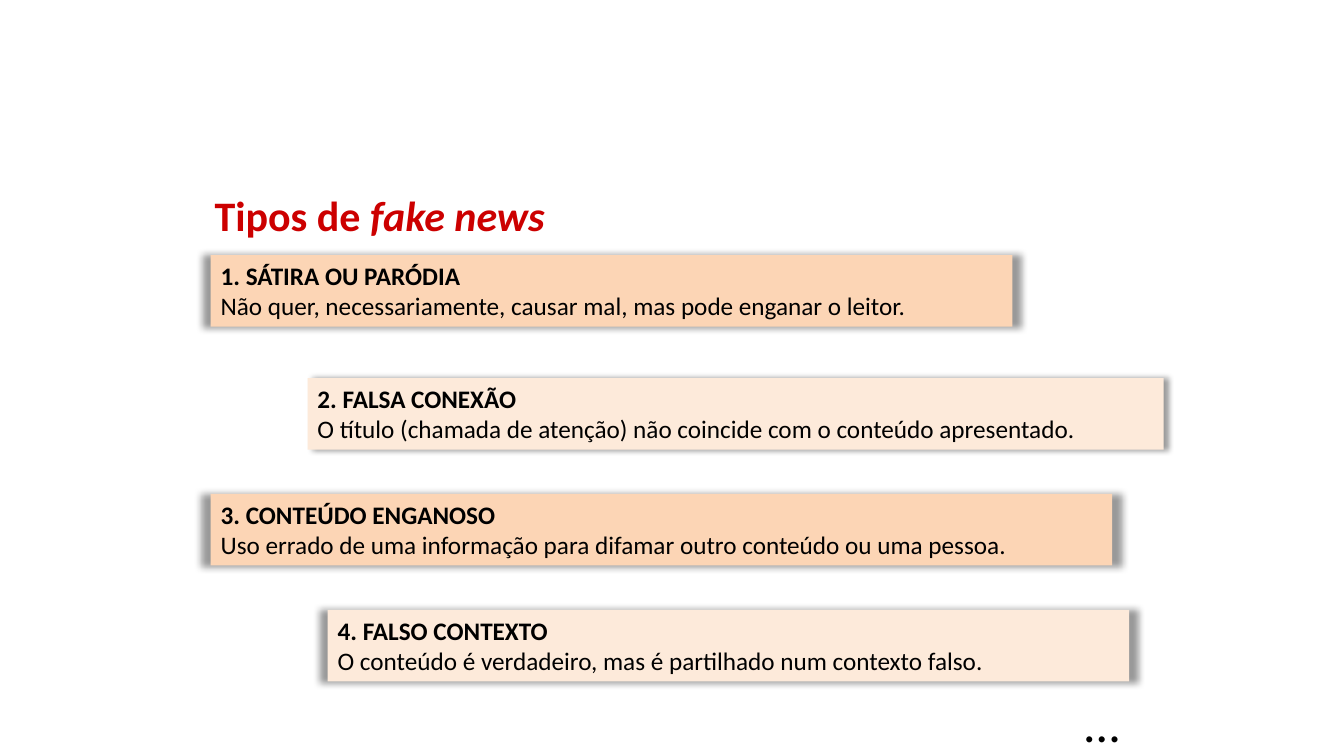
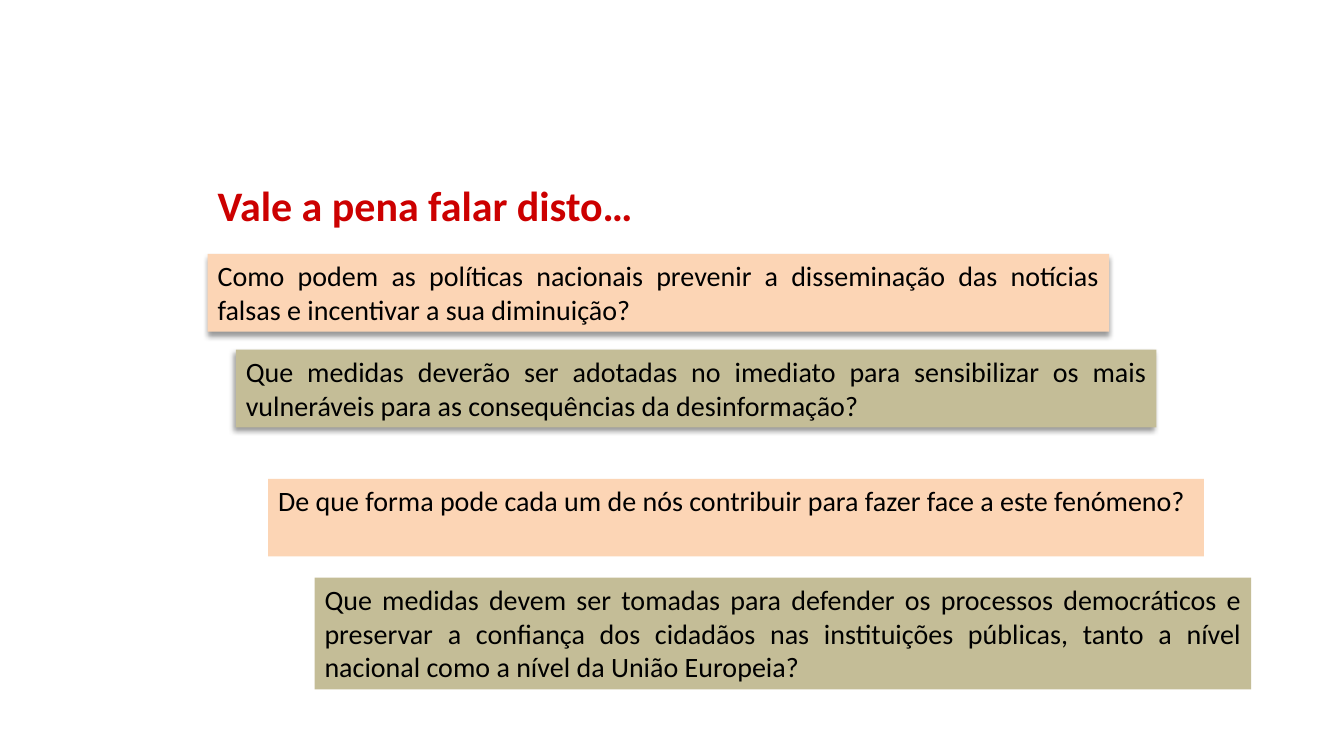
from lxml.etree import SubElement
from pptx import Presentation
from pptx.dml.color import RGBColor
from pptx.enum.shapes import MSO_SHAPE
from pptx.enum.text import MSO_ANCHOR, PP_ALIGN
from pptx.oxml.ns import qn
from pptx.util import Inches, Pt

FONT = "Calibri"
BLACK, RED = "000000", "CC0000"
PEACH, PALE_PEACH, OLIVE = "FCD5B5", "FDEADA", "C4BD97"
TITLE_FORMAT = {"size": Pt(30), "bold": True}
HEADING_FORMAT = {"size": Pt(18), "bold": True}
BODY_FORMAT = {"size": Pt(18)}
QUESTION_FORMAT = {"size": Pt(20)}
ELLIPSIS_FORMAT = {"size": Pt(36)}

HALO = {"blurRad": Pt(5), "sx": 102000, "sy": 102000, "algn": "ctr"}
RIGHT_SHADOW = {"blurRad": Pt(4), "dist": Pt(3), "algn": "l"}
DOWN_SHADOW = {"blurRad": Pt(4), "dist": Pt(3), "dir": 90 * 60000, "algn": "t"}
DIAGONAL_SHADOW = {"blurRad": Pt(4), "dist": Pt(3), "dir": 135 * 60000, "algn": "tr"}

TYPES_TITLE = [("Tipos de ", {}), ("fake news", {"italic": True})]
TYPES = [
    ("SÁTIRA OU PARÓDIA",
     "Não quer, necessariamente, causar mal, mas pode enganar o leitor.",
     (2.09, 2.53, 7.95, 0.71), HALO),
    ("FALSA CONEXÃO",
     "O título (chamada de atenção) não coincide com o conteúdo apresentado.",
     (3.05, 3.75, 8.49, 0.71), RIGHT_SHADOW),
    ("CONTEÚDO ENGANOSO",
     "Uso errado de uma informação para difamar outro conteúdo ou uma pessoa.",
     (2.09, 4.9, 8.94, 0.71), HALO),
    ("FALSO CONTEXTO",
     "O conteúdo é verdadeiro, mas é partilhado num contexto falso.",
     (3.25, 6.05, 7.95, 0.71), HALO),
]

QUESTIONS_TITLE = [("Vale a pena falar disto…", {})]
QUESTIONS = [
    ("Como podem as políticas nacionais prevenir a disseminação das notícias "
     "falsas e incentivar a sua diminuição?",
     (2.06, 2.52, 8.94, 0.77), DOWN_SHADOW, PP_ALIGN.JUSTIFY),
    ("Que medidas deverão ser adotadas no imediato para sensibilizar os mais "
     "vulneráveis para as consequências da desinformação?",
     (2.34, 3.47, 9.13, 0.77), DIAGONAL_SHADOW, PP_ALIGN.JUSTIFY),
    ("De que forma pode cada um de nós contribuir para fazer face a este fenómeno?",
     (2.66, 4.75, 9.28, 0.77), None, PP_ALIGN.LEFT),
    ("Que medidas devem ser tomadas para defender os processos democráticos e "
     "preservar a confiança dos cidadãos nas instituições públicas, tanto a nível "
     "nacional como a nível da União Europeia?",
     (3.12, 5.73, 9.29, 1.11), None, PP_ALIGN.JUSTIFY),
]


def color(value):
    return RGBColor.from_string(value)


def write_text(shape, paragraphs, text_color=BLACK, alignment=PP_ALIGN.LEFT):
    frame = shape.text_frame
    frame.word_wrap = True
    frame.vertical_anchor = MSO_ANCHOR.TOP
    for index, runs in enumerate(paragraphs):
        paragraph = frame.add_paragraph() if index else frame.paragraphs[0]
        paragraph.alignment = alignment
        for text, formats in runs:
            run = paragraph.add_run()
            run.text = text
            run.font.color.rgb = color(text_color)
            for name, value in {"name": FONT, **formats}.items():
                setattr(run.font, name, value)


def add_text(slide, box, runs, text_color=BLACK, alignment=PP_ALIGN.LEFT):
    shape = slide.shapes.add_textbox(*map(Inches, box))
    write_text(shape, [runs], text_color, alignment)


def add_title(slide, left, top, runs):
    title_runs = [(text, {**TITLE_FORMAT, **formats}) for text, formats in runs]
    add_text(slide, (left, top, 8, 0.61), title_runs, RED)


def add_shadow(shape, settings):
    effects = shape.element.spPr.find(qn("a:effectLst"))
    shadow = SubElement(effects, qn("a:outerShdw"))
    for name, value in {**settings, "rotWithShape": 0}.items():
        shadow.set(name, str(value))
    shade = SubElement(shadow, qn("a:srgbClr"), val=BLACK)
    SubElement(shade, qn("a:alpha"), val="40000")


def add_panel(slide, box, fill, shadow, paragraphs, alignment=PP_ALIGN.LEFT):
    shape = slide.shapes.add_shape(MSO_SHAPE.RECTANGLE, *map(Inches, box))
    shape.fill.solid()
    shape.fill.fore_color.rgb = color(fill)
    shape.line.fill.background()
    shape.shadow.inherit = False
    if shadow:
        add_shadow(shape, shadow)
    write_text(shape, paragraphs, alignment=alignment)


def build_types(slide):
    add_text(slide, (9.47, 6.82, 1.73, 0.71), [("…", ELLIPSIS_FORMAT)],
             alignment=PP_ALIGN.RIGHT)
    add_title(slide, 2.03, 1.83, TYPES_TITLE)
    for index, (heading, body, box, shadow) in enumerate(TYPES):
        paragraphs = [[(f"{index + 1}. {heading}", HEADING_FORMAT)], [(body, BODY_FORMAT)]]
        add_panel(slide, box, (PEACH, PALE_PEACH)[index % 2], shadow, paragraphs)


def build_questions(slide):
    add_title(slide, 2.06, 1.73, QUESTIONS_TITLE)
    for index, (question, box, shadow, alignment) in enumerate(QUESTIONS):
        add_panel(slide, box, (PEACH, OLIVE)[index % 2], shadow,
                  [[(question, QUESTION_FORMAT)]], alignment)


def main():
    presentation = Presentation()
    presentation.slide_width = Inches(13.33)
    presentation.slide_height = Inches(7.5)
    for build in (build_types, build_questions):
        build(presentation.slides.add_slide(presentation.slide_layouts[6]))
    presentation.save("out.pptx")


if __name__ == "__main__":
    main()
